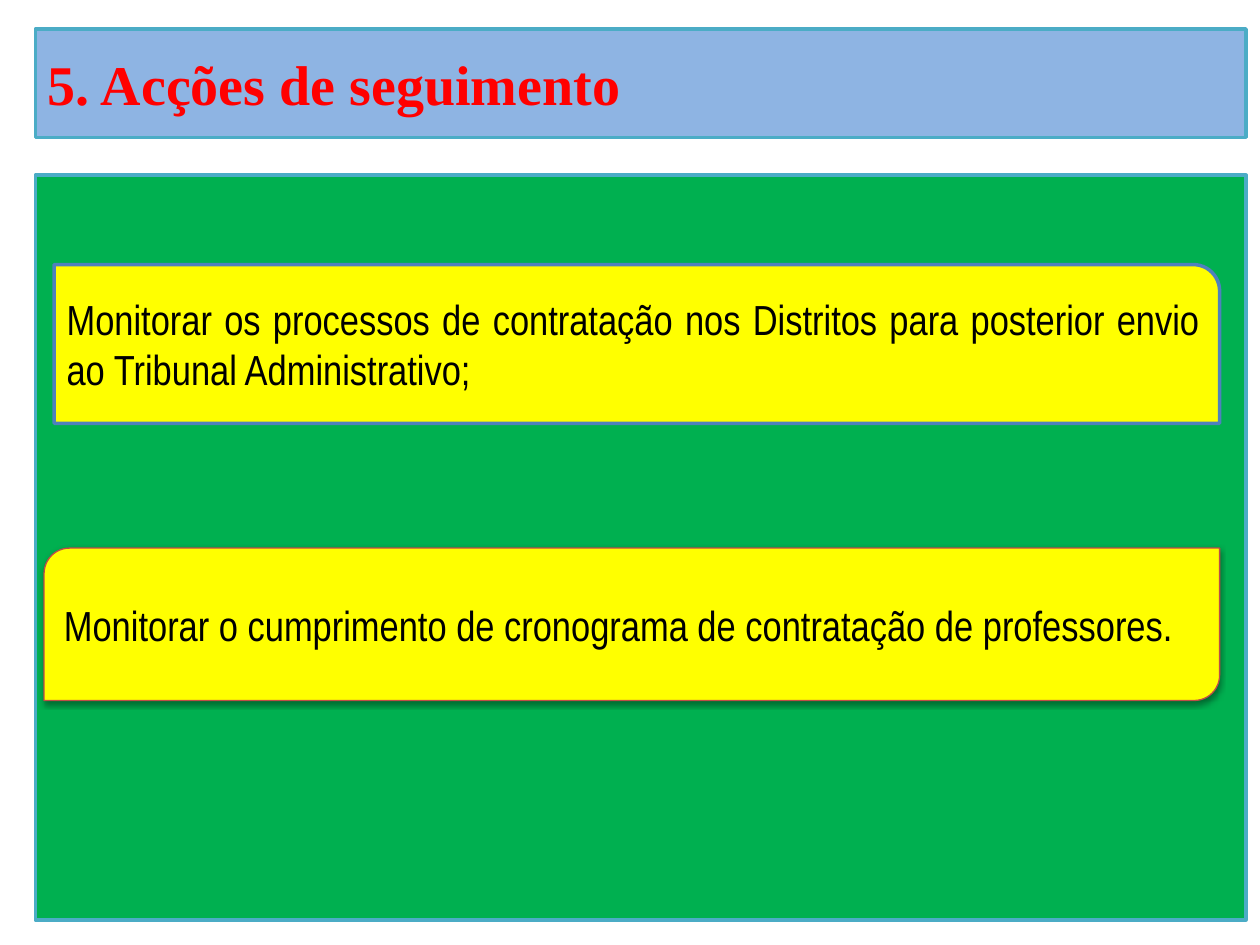
from lxml import etree
from pptx import Presentation
from pptx.dml.color import RGBColor
from pptx.enum.shapes import MSO_SHAPE
from pptx.enum.text import MSO_ANCHOR, MSO_AUTO_SIZE, PP_ALIGN
from pptx.oxml import parse_xml
from pptx.util import Inches, Pt

RECT = MSO_SHAPE.RECTANGLE
ONE_ROUND = MSO_SHAPE.ROUND_1_RECTANGLE
DIAGONAL_ROUND = MSO_SHAPE.ROUND_2_DIAG_RECTANGLE
LEFT, JUSTIFY = PP_ALIGN.LEFT, PP_ALIGN.JUSTIFY

THEME = {
    "header": "8EB4E3", "panel": "00B050", "card": "FFFF00",
    "frame": "4BACC6", "blue": "4F81BD", "red": "BF4C48",
    "heading": "FF0000", "ink": "000000",
    "heading_font": "Times New Roman", "body_font": "Arial Narrow",
    "heading_size": 32, "body_size": 24,
}

HEADING = "5. Acções de seguimento"
HEADING_BOX = (0.28, 0.23, 9.61, 0.86)
PANEL_BOX = (0.28, 1.39, 9.61, 5.91)
ACTIONS = [
    {"text": "Monitorar o cumprimento de cronograma de contratação de professores.",
     "box": (0.35, 4.35, 9.33, 1.21), "outline": DIAGONAL_ROUND,
     "border": "red", "width": 0.75, "raised": True},
    {"text": "Monitorar os processos de contratação nos Distritos para posterior "
             "envio ao Tribunal Administrativo;",
     "box": (0.43, 2.1, 9.25, 1.26), "outline": ONE_ROUND,
     "border": "blue", "width": 2, "raised": False},
]

SHADOW = (
    '<a:effectLst xmlns:a="http://schemas.openxmlformats.org/drawingml/2006/main">'
    '<a:outerShdw blurRad="{blur}" dist="{distance}" dir="5400000" rotWithShape="0">'
    '<a:srgbClr val="{color}"><a:alpha val="38000"/></a:srgbClr>'
    '</a:outerShdw></a:effectLst>'
)


def color(role):
    return RGBColor.from_string(THEME[role])


def paint(part, fill, border, width):
    part.fill.solid()
    part.fill.fore_color.rgb = color(fill)
    part.line.color.rgb = color(border)
    part.line.width = Pt(width)


def write(part, text, *, style="body", ink="ink", bold=False, align=LEFT):
    frame = part.text_frame
    frame.word_wrap = True
    frame.auto_size = MSO_AUTO_SIZE.NONE
    frame.vertical_anchor = MSO_ANCHOR.MIDDLE
    paragraph = frame.paragraphs[0]
    paragraph.alignment = align
    run = paragraph.add_run()
    run.text = text
    run.font.name = THEME[style + "_font"]
    run.font.size = Pt(THEME[style + "_size"])
    run.font.bold = bold
    run.font.color.rgb = color(ink)


def add_block(slide, outline, box, fill, border, width):
    block = slide.shapes.add_shape(outline, *map(Inches, box))
    block.shadow.inherit = False
    paint(block, fill, border, width)
    return block


def raise_block(block):
    properties = block.element.spPr
    for effects in properties.findall(etree.QName(
            "http://schemas.openxmlformats.org/drawingml/2006/main", "effectLst").text):
        properties.remove(effects)
    properties.append(parse_xml(SHADOW.format(
        blur=Pt(3.1), distance=Pt(1.6), color=THEME["ink"])))


def main():
    deck = Presentation()
    deck.slide_width, deck.slide_height = Inches(10), Inches(7.5)
    slide = deck.slides.add_slide(deck.slide_layouts[5])

    heading = slide.shapes.title
    heading.left, heading.top, heading.width, heading.height = map(Inches, HEADING_BOX)
    paint(heading, "header", "frame", 2)
    write(heading, HEADING, style="heading", ink="heading", bold=True)

    add_block(slide, RECT, PANEL_BOX, "panel", "frame", 2)
    for action in ACTIONS:
        card = add_block(slide, action["outline"], action["box"],
                         "card", action["border"], action["width"])
        if action["raised"]:
            raise_block(card)
        write(card, action["text"], align=JUSTIFY)

    deck.save("out.pptx")


if __name__ == "__main__":
    main()
